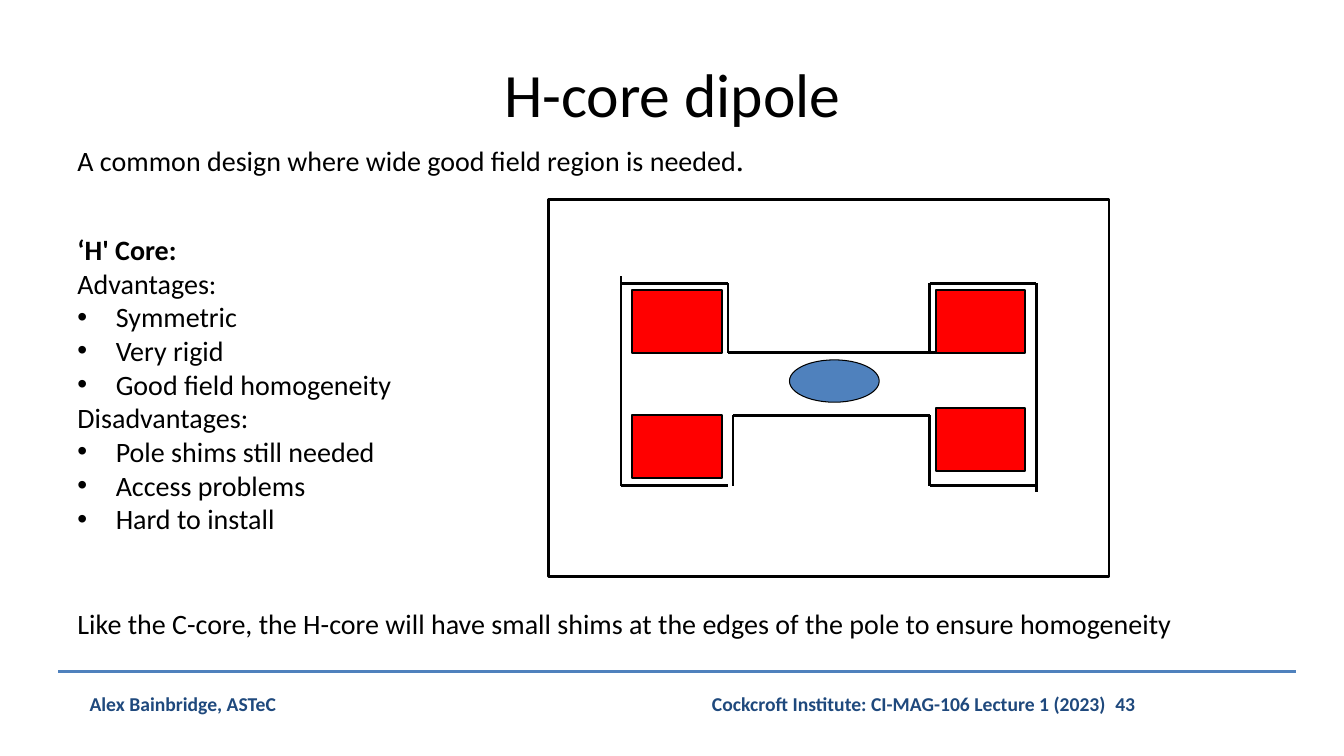
from typing import NamedTuple

from lxml.etree import SubElement
from pptx import Presentation
from pptx.dml.color import RGBColor
from pptx.enum.shapes import MSO_CONNECTOR as Link, MSO_SHAPE as Kind
from pptx.enum.text import MSO_ANCHOR as Anchor, PP_ALIGN as Align
from pptx.oxml.ns import qn
from pptx.util import Inches, Pt

HUES = {"ink": "000000", "navy": "1F497D", "blue": "4F81BD", "coil": "FF0000"}
FONT = "Calibri"


class Box(NamedTuple):
    left: float
    top: float
    width: float
    height: float


class Line(NamedTuple):
    x1: float
    y1: float
    x2: float
    y2: float
    hue: str = "ink"


class Part(NamedTuple):
    kind: Kind
    box: Box
    fill: str | None
    weight: float


class Item(NamedTuple):
    text: str
    bold: bool = False
    bullet: bool = False


def color(name: str) -> RGBColor:
    return RGBColor.from_string(HUES[name])


def add_run(para, text: str, *, size: float = 20, hue: str = "ink",
            bold: bool = False, font: str = FONT) -> None:
    run = para.add_run()
    run.text = text
    run.font.name = font
    run.font.size = Pt(size)
    run.font.bold = bold
    run.font.color.rgb = color(hue)


def add_bullet(para) -> None:
    props = para._p.get_or_add_pPr()
    props.set("marL", str(Inches(0.38)))
    props.set("indent", str(-Inches(0.38)))
    SubElement(props, qn("a:buFont")).set("typeface", "Arial")
    SubElement(props, qn("a:buChar")).set("char", "•")


def add_text(slide, box: Box, items: list[Item], *, align: Align = Align.LEFT,
             size: float = 20, hue: str = "ink"):
    frame = slide.shapes.add_textbox(*map(Inches, box)).text_frame
    frame.word_wrap = True
    for i, item in enumerate(items):
        para = frame.add_paragraph() if i else frame.paragraphs[0]
        para.alignment = align
        if item.bullet:
            add_bullet(para)
        add_run(para, item.text, size=size, hue=hue, bold=item.bold)
    return frame


def add_title(slide, text: str) -> None:
    title = slide.shapes.title
    title.left, title.top, title.width, title.height = map(Inches, (0.67, 0.3, 12, 1.25))
    frame = title.text_frame
    frame.vertical_anchor = Anchor.MIDDLE
    para = frame.paragraphs[0]
    para.alignment = Align.CENTER
    add_run(para, text, size=44)


def add_line(slide, line: Line) -> None:
    ends = map(Inches, line[:4])
    link = slide.shapes.add_connector(Link.STRAIGHT, *ends)
    link.line.color.rgb = color(line.hue)
    link.line.width = Pt(2)
    SubElement(link._element.spPr, qn("a:effectLst"))


def add_part(slide, part: Part) -> None:
    shape = slide.shapes.add_shape(part.kind, *map(Inches, part.box))
    shape.shadow.inherit = False
    if part.fill:
        shape.fill.solid()
        shape.fill.fore_color.rgb = color(part.fill)
    else:
        shape.fill.background()
    shape.line.color.rgb = color("ink")
    shape.line.width = Pt(part.weight)


def add_magnet(slide) -> None:
    left, right, top, base = 6.16, 10.28, 2.81, 4.82
    inner, low, outer = 7.22, 7.27, 9.22
    upper, lower = 3.5, 4.12
    lines = [Line(left, top - 0.07, left, base), Line(right, top, right, base + 0.06)]
    lines += [Line(a, y, b, y) for a, b in ((left, inner), (outer, right))
              for y in (top, base)]
    lines += [Line(x, top, x, upper) for x in (inner, outer)]
    lines += [Line(x, lower, x, base) for x in (low, outer)]
    lines += [Line(inner, upper, 9.28, upper), Line(low, lower, outer, lower)]
    coils = [(6.27, 2.88), (6.27, 4.12), (9.28, 2.88), (9.28, 4.05)]

    add_part(slide, Part(Kind.RECTANGLE, Box(5.44, 1.98, 5.56, 3.74), None, 2))
    for line in lines:
        add_line(slide, line)
    for x, y in coils:
        add_part(slide, Part(Kind.RECTANGLE, Box(x, y, 0.89, 0.62), "coil", 1.5))
    add_part(slide, Part(Kind.OVAL, Box(7.83, 3.57, 0.89, 0.42), "blue", 0.75))


def add_footer(slide) -> None:
    add_text(slide, Box(0.79, 6.82, 5.14, 0.34),
             [Item("Alex Bainbridge, ASTeC", bold=True)], size=14, hue="navy")
    add_line(slide, Line(0.58, 6.66, 12.85, 6.66, "blue"))
    add_text(slide, Box(5.47, 6.82, 7.38, 0.34),
             [Item("Cockcroft Institute: CI-MAG-106 Lecture 1 (2023)\t43", bold=True)],
             align=Align.CENTER, size=14, hue="navy")


def main() -> None:
    deck = Presentation()
    deck.slide_width, deck.slide_height = Inches(13.33), Inches(7.5)
    slide = deck.slides.add_slide(deck.slide_layouts[5])
    add_footer(slide)
    add_title(slide, "H-core dipole")
    intro = add_text(slide, Box(0.67, 1.37, 10.33, 0.44),
                     [Item("A common design where wide good field region is needed")])
    add_run(intro.paragraphs[0], ".", font="Vollkorn")
    pros = ["Symmetric", "Very rigid", "Good field homogeneity"]
    cons = ["Pole shims still needed", "Access problems", "Hard to install"]
    add_text(slide, Box(0.67, 2.26, 5.64, 3.13), [
        Item("‘H' Core:", bold=True),
        Item("Advantages:"), *(Item(text, bullet=True) for text in pros),
        Item("Disadvantages:"), *(Item(text, bullet=True) for text in cons),
    ])
    add_text(slide, Box(0.67, 5.97, 11.84, 0.44), [
        Item("Like the C-core, the H-core will have small shims "
             "at the edges of the pole to ensure homogeneity")])
    add_magnet(slide)
    deck.save("out.pptx")


if __name__ == "__main__":
    main()
